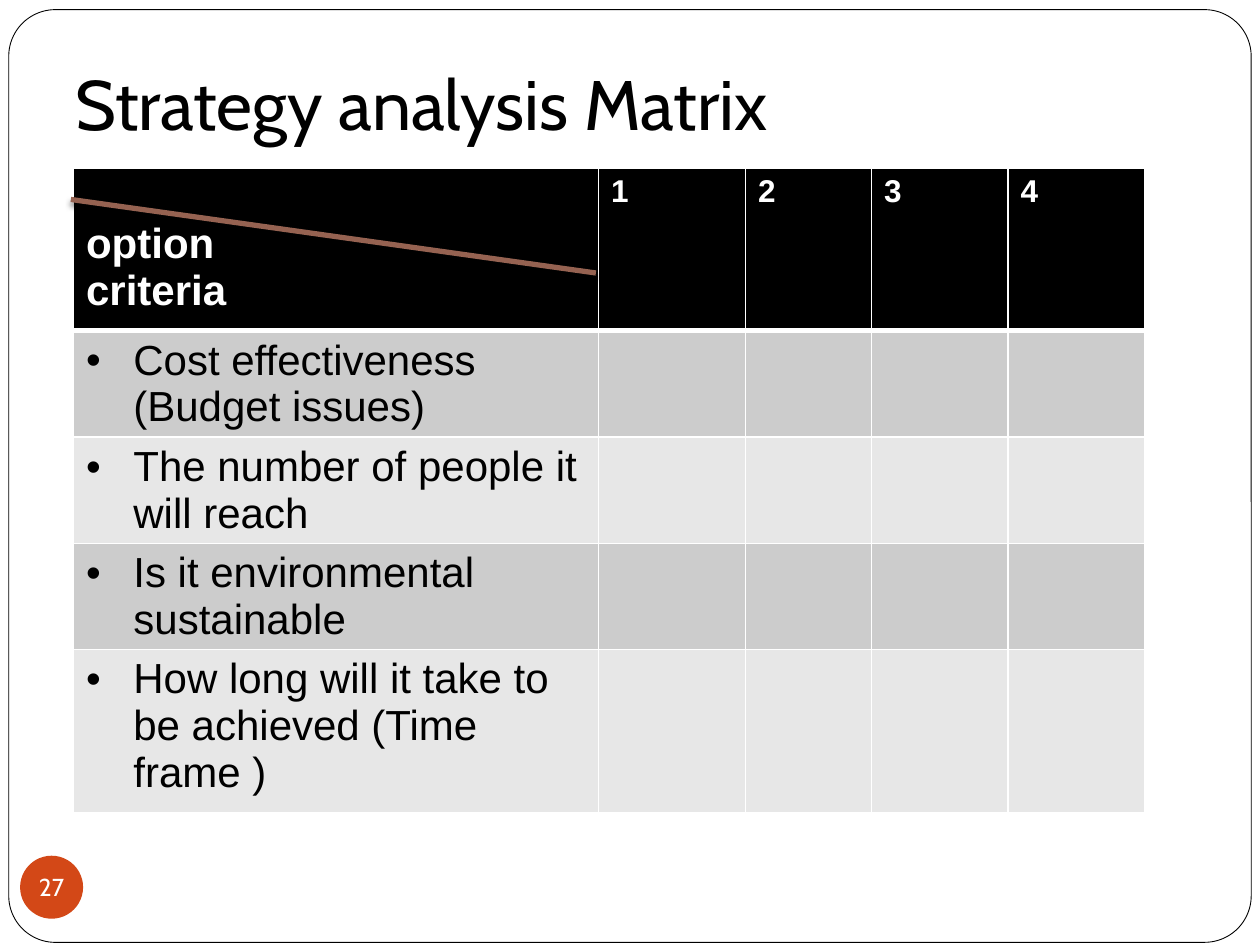
"""Build the strategy analysis matrix slide."""
from lxml.etree import SubElement
from pptx import Presentation
from pptx.dml.color import RGBColor
from pptx.enum.shapes import MSO_CONNECTOR, MSO_SHAPE
from pptx.enum.text import MSO_ANCHOR, MSO_AUTO_SIZE, PP_ALIGN
from pptx.oxml import parse_xml
from pptx.oxml.ns import nsdecls, qn
from pptx.util import Pt

BLACK, WHITE, ORANGE, BROWN = "000000", "FFFFFF", "D34817", "956251"
BANDS = ["CCCCCC", "E7E7E7"]
COLS = [300, 84, 72, 78, 78]
ROWS = [93, 54, 54, 54, 93]
OPTIONS = ["1", "2", "3", "4"]
CRITERIA = [
    "Cost effectiveness (Budget issues)",
    "The number of people it will reach",
    "Is it environmental sustainable",
    "How long will it take to be achieved (Time frame )",
]


def rgb(value):
    return RGBColor.from_string(value)


def apply(obj, values):
    for name, value in values.items():
        setattr(obj, name, value)


class SlideBuilder:
    def __init__(self, prs, heading_font, body_font):
        self.heading_font, self.body_font = heading_font, body_font
        self.s = prs.slides.add_slide(prs.slide_layouts[5])

    def add_text(self, tf, lines, font, size, color, bold=False, align=PP_ALIGN.LEFT):
        for i, line in enumerate(lines):
            p = tf.paragraphs[0] if i == 0 else tf.add_paragraph()
            p.alignment = align
            r = p.add_run()
            r.text = line
            apply(r.font, {"name": font, "size": Pt(size), "bold": bold})
            r.font.color.rgb = rgb(color)

    def title(self, text, x, y, w, h):
        sp = self.s.shapes.title
        apply(sp, {"left": Pt(x), "top": Pt(y), "width": Pt(w), "height": Pt(h)})
        apply(sp.text_frame, {
            "vertical_anchor": MSO_ANCHOR.BOTTOM, "auto_size": MSO_AUTO_SIZE.NONE,
            "margin_left": Pt(7.2), "margin_right": Pt(7.2),
            "margin_top": Pt(3.6), "margin_bottom": Pt(7.2),
        })
        self.add_text(sp.text_frame, [text], self.heading_font, 40, BLACK)

    def shape(self, kind, x, y, w, h, fill, line=None):
        sp = self.s.shapes.add_shape(kind, Pt(x), Pt(y), Pt(w), Pt(h))
        sp.shadow.inherit = False
        sp.fill.solid()
        sp.fill.fore_color.rgb = rgb(fill)
        if line:
            sp.line.color.rgb = rgb(line)
            sp.line.width = Pt(0.5)
        else:
            sp.line.fill.background()
        return sp

    def frame(self, x, y, w, h):
        sp = self.shape(MSO_SHAPE.ROUNDED_RECTANGLE, x, y, w, h, WHITE, BLACK)
        sp.adjustments[0] = 0.05
        self.s.shapes.title.element.addprevious(sp.element)

    def badge(self, text, x, y, size):
        sp = self.shape(MSO_SHAPE.OVAL, x, y, size, size, ORANGE)
        apply(sp.text_frame, {
            "word_wrap": False, "vertical_anchor": MSO_ANCHOR.MIDDLE,
            "margin_left": 0, "margin_right": 0, "margin_top": 0, "margin_bottom": 0,
        })
        self.add_text(sp.text_frame, [text], self.heading_font, 14, WHITE, align=PP_ALIGN.CENTER)

    def border(self, cell, widths):
        tcPr = cell._tc.get_or_add_tcPr()
        for i, (side, width) in enumerate(widths.items()):
            tcPr.insert(i, parse_xml(
                f'<a:ln{side} {nsdecls("a")} w="{Pt(width)}"><a:solidFill>'
                f'<a:srgbClr val="{WHITE}"/></a:solidFill></a:ln{side}>'))

    def bullet(self, p):
        pPr = p._p.get_or_add_pPr()
        pPr.set("marL", str(Pt(27)))
        pPr.set("indent", str(-Pt(27)))
        SubElement(pPr, qn("a:buFont")).set("typeface", self.body_font)
        SubElement(pPr, qn("a:buChar")).set("char", "•")

    def matrix(self, x, y, corner, options, criteria):
        table = self.s.shapes.add_table(
            len(ROWS), len(COLS), Pt(x), Pt(y), Pt(sum(COLS)), Pt(sum(ROWS))).table
        for col, width in zip(table.columns, COLS):
            col.width = Pt(width)
        for i, height in enumerate(ROWS):
            table.rows[i].height = Pt(height)
            for cell in table.rows[i].cells:
                cell.fill.solid()
                cell.fill.fore_color.rgb = rgb(BANDS[(i - 1) % 2] if i else BLACK)
                self.border(cell, {"L": 1, "R": 1, "T": 3 if i == 1 else 1, "B": 1 if i else 3})
        head = table.cell(0, 0)
        head.margin_top = Pt(30)
        self.add_text(head.text_frame, corner, self.body_font, 24, WHITE, True)
        for j, option in enumerate(options, 1):
            self.add_text(table.cell(0, j).text_frame, [option], self.body_font, 18, WHITE, True)
        for i, criterion in enumerate(criteria, 1):
            tf = table.cell(i, 0).text_frame
            self.add_text(tf, [criterion], self.body_font, 24, BLACK)
            self.bullet(tf.paragraphs[0])

    def diagonal(self, x1, y1, x2, y2):
        sp = self.s.shapes.add_connector(
            MSO_CONNECTOR.STRAIGHT, Pt(x1), Pt(y1), Pt(x2), Pt(y2))
        sp.line.color.rgb = rgb(BROWN)
        sp.line.width = Pt(3)
        sp._element.spPr.append(parse_xml(
            f'<a:effectLst {nsdecls("a")}><a:outerShdw blurRad="{Pt(3)}" dist="{Pt(2)}" '
            f'dir="5400000" rotWithShape="0"><a:srgbClr val="{BLACK}">'
            '<a:alpha val="50000"/></a:srgbClr></a:outerShdw></a:effectLst>'))


def main():
    prs = Presentation()
    apply(prs, {"slide_width": Pt(720), "slide_height": Pt(540)})
    b = SlideBuilder(prs, "Cabin", "Arial")
    b.frame(5, 5.5, 710, 533)
    b.title("Strategy analysis Matrix", 36, 24, 648, 66)
    b.badge("27", 11.5, 489, 36)
    b.matrix(42, 96, ["option", "criteria"], OPTIONS, CRITERIA)
    b.diagonal(40.5, 114, 340.5, 156)
    prs.save("out.pptx")


if __name__ == "__main__":
    main()
